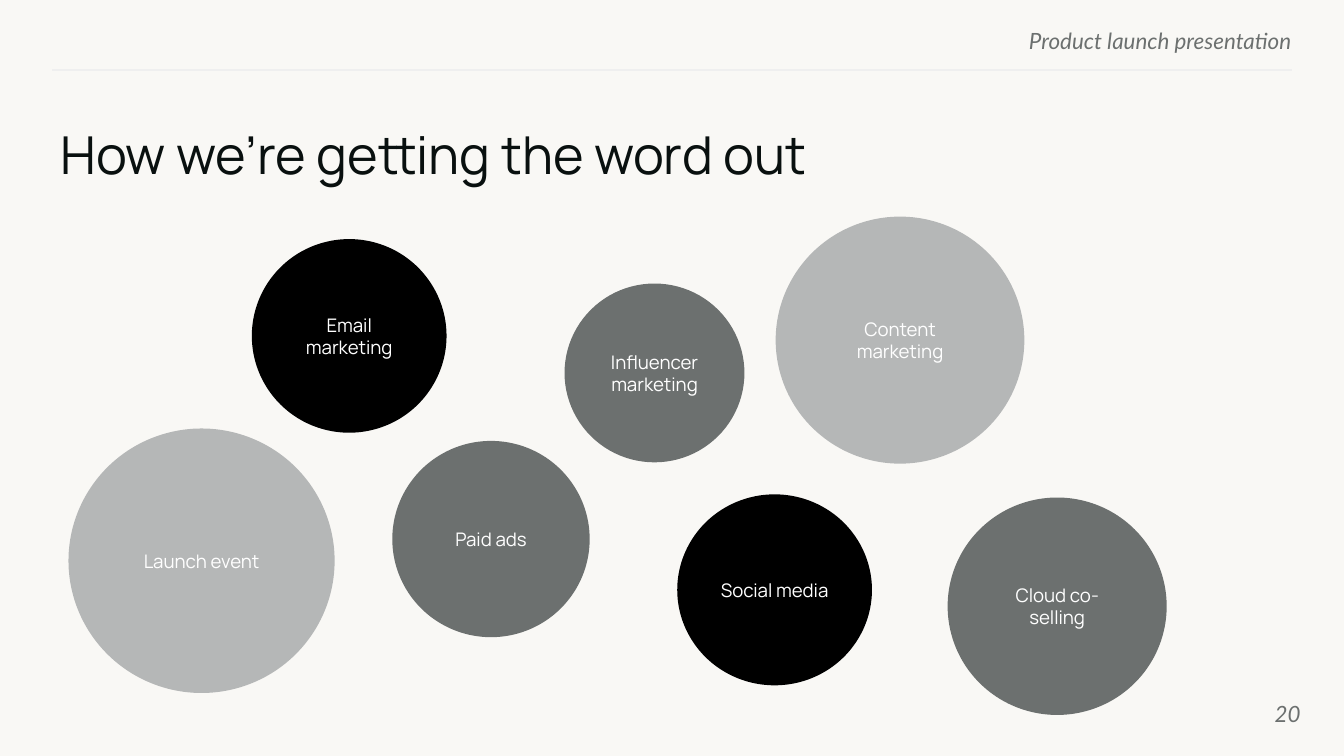
import pptx
import pptx.util
import pptx.dml.color
import pptx.enum.shapes
import pptx.enum.text
import lxml.etree

Cm = pptx.util.Cm
Pt = pptx.util.Pt
SHAPE = pptx.enum.shapes.MSO_SHAPE
ALIGN = pptx.enum.text.PP_ALIGN
ANCHOR = pptx.enum.text.MSO_ANCHOR


def paint(fmt, color):
    if hasattr(fmt, "solid"):
        fmt.solid()
        fmt = fmt.fore_color
    fmt.rgb = pptx.dml.color.RGBColor.from_string(color)


def write(sp, text, size, font, color, align, anchor, inset=0, italic=False):
    tf = sp.text_frame
    tf.word_wrap = True
    tf.auto_size = pptx.enum.text.MSO_AUTO_SIZE.NONE
    tf.vertical_anchor = anchor
    tf.margin_left = tf.margin_right = tf.margin_top = tf.margin_bottom = Cm(inset)
    p = tf.paragraphs[0]
    p.alignment = align
    r = p.add_run()
    r.text = text
    r.font.size = Pt(size)
    r.font.name = font
    r.font.italic = italic
    paint(r.font.color, color)
    return p


prs = pptx.Presentation()
prs.slide_width, prs.slide_height = Cm(25.4), Cm(14.29)
s = prs.slides.add_slide(prs.slide_layouts[5])
paint(s.background.fill, "F9F8F5")

rule = s.shapes.add_connector(
    pptx.enum.shapes.MSO_CONNECTOR.STRAIGHT, Cm(24.41), Cm(1.32), Cm(0.99), Cm(1.32))
paint(rule.line.fill, "EFEFEF")
rule.line.width = Pt(0.75)
lxml.etree.SubElement(rule.element.spPr, pptx.oxml.ns.qn("a:effectLst"))

header = s.shapes.add_textbox(Cm(14.63), Cm(0.51), Cm(9.78), Cm(0.46))
write(header, "Product launch presentation", 12, "Lato", "6C706F",
      ALIGN.RIGHT, ANCHOR.TOP, italic=True)

title = s.shapes.title
title.left, title.top, title.width, title.height = Cm(1.14), Cm(2.31), Cm(23.44), Cm(1.3)
p = write(title, "How we’re getting the word out", 28, "Manrope", "09100F",
          ALIGN.LEFT, ANCHOR.TOP)
p.space_before = Pt(0)
p.space_after = Pt(10)

number = s.shapes.add_textbox(Cm(23.06), Cm(12.95), Cm(1.52), Cm(1.09))
write(number, "20", 12, "Lato", "6C706F", ALIGN.RIGHT, ANCHOR.MIDDLE, italic=True)

channels = [
    ("Influencer marketing", "6C706F", 12.37, 7.05, (3.4, 3.38), (2.36, 1.09)),
    ("Paid ads", "6C706F", 9.28, 10.19, (3.73, 3.71), (2.57, 1.19)),
    ("Email marketing", "000000", 6.6, 6.35, (3.68, 3.66), (2.54, 1.19)),
    ("Social media", "000000", 14.64, 11.15, (3.68, 3.61), (2.55, 1.17)),
    ("Content marketing", "B5B7B7", 17.01, 6.43, (4.7, 4.67), (3.25, 1.52)),
    ("Launch event", "B5B7B7", 3.81, 10.6, (5.03, 5), (3.02, 1.42)),
    ("Cloud co-selling", "6C706F", 19.98, 11.46, (4.14, 4.11), (2.62, 1.22)),
]
for text, color, cx, cy, bubble, label in channels:
    for kind, (w, h) in ((SHAPE.OVAL, bubble), (SHAPE.RECTANGLE, label)):
        sp = s.shapes.add_shape(kind, Cm(cx - w / 2), Cm(cy - h / 2), Cm(w), Cm(h))
        sp.shadow.inherit = False
        paint(sp.fill, color)
        sp.line.fill.background()
    write(sp, text, 10, "Manrope", "FFFFFF", ALIGN.CENTER, ANCHOR.MIDDLE, inset=0.25)

prs.save("out.pptx")
